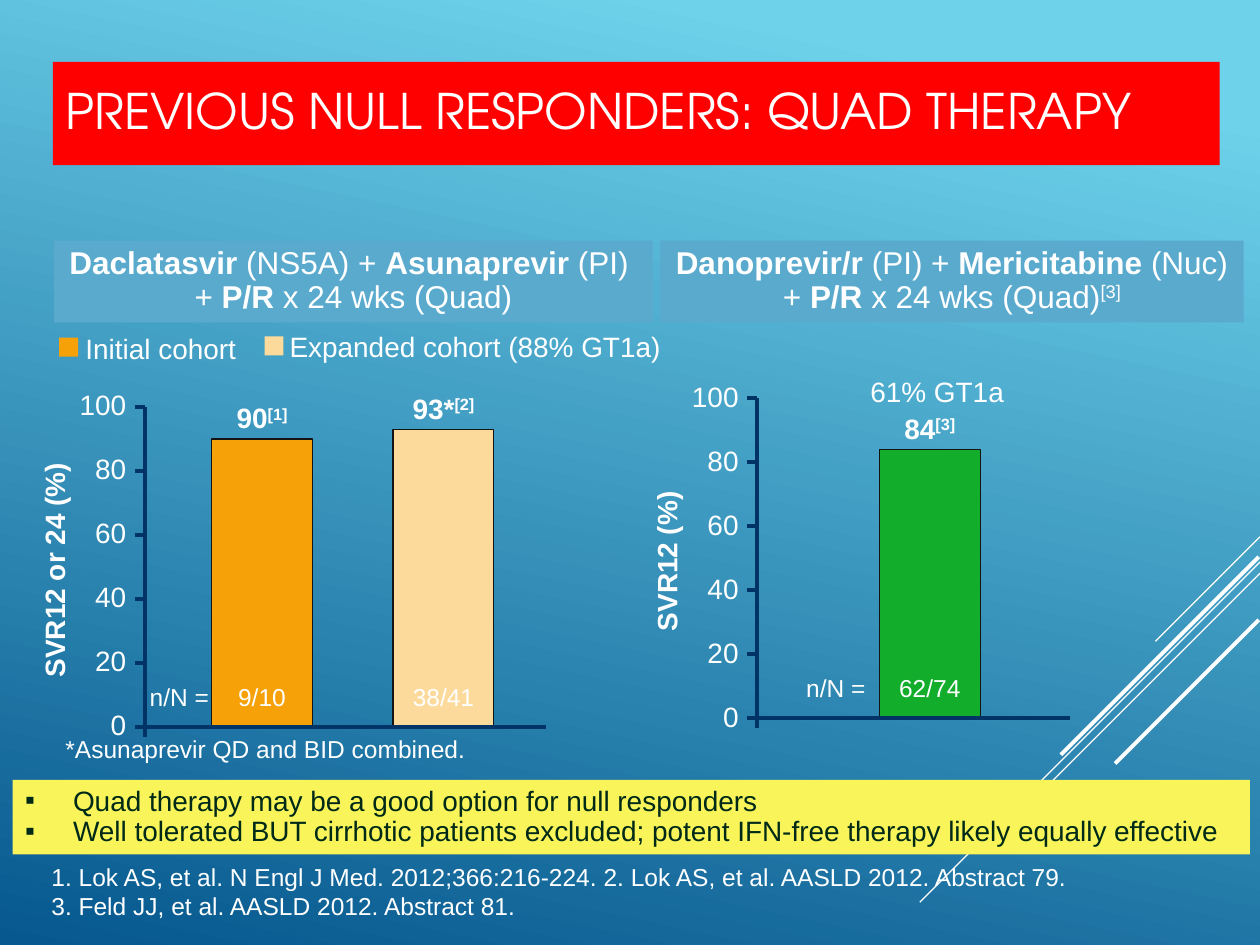
from pptx import Presentation
from pptx.dml.color import RGBColor
from pptx.enum.shapes import MSO_CONNECTOR, MSO_SHAPE
from pptx.enum.text import MSO_ANCHOR, MSO_AUTO_SIZE, PP_ALIGN
from pptx.oxml.ns import qn
from pptx.util import Inches, Pt

LEFT, CENTER, RIGHT = PP_ALIGN.LEFT, PP_ALIGN.CENTER, PP_ALIGN.RIGHT
TOP, MIDDLE = MSO_ANCHOR.TOP, MSO_ANCHOR.MIDDLE
NO_AUTOFIT = MSO_AUTO_SIZE.NONE
STRAIGHT = MSO_CONNECTOR.STRAIGHT
RECTANGLE = MSO_SHAPE.RECTANGLE

COLORS = {
    "sky": "6ED2EB", "deep": "06588E", "white": "FFFFFF", "title": "FF0000",
    "summary": "F8F45A", "summary_text": "002A17", "heading": "5AAACE",
    "axis": "003366", "outline": "141415",
    "initial": "F6A108", "expanded": "FCDA9C", "danoprevir": "12AD2B",
}
BODY_FONT, TITLE_FONT = "Arial", "TeX Gyre Adventor"
TICK_LABELS = (100, 80, 60, 40, 20, 0)
BAR_WIDTH = 0.8


def color(name):
    """Return the named palette colour."""
    return RGBColor.from_string(COLORS[name])


def place(shape, box):
    """Move a shape to a box of left, top, width and height in inches."""
    shape.left, shape.top, shape.width, shape.height = map(Inches, box)


def write(shape, paragraphs, size=16, font=BODY_FONT, ink="white", align=LEFT,
          anchor=TOP, spacing=0.9, wrap=False, bold=False):
    """Write paragraphs, each a list of (text, style) runs; style holds b or s."""
    frame = shape.text_frame
    frame.auto_size = NO_AUTOFIT
    frame.word_wrap = wrap
    frame.vertical_anchor = anchor
    for index, runs in enumerate(paragraphs):
        paragraph = frame.add_paragraph() if index else frame.paragraphs[0]
        paragraph.alignment = align
        paragraph.line_spacing = spacing
        paragraph.space_before = Pt(0)
        for text, style in runs:
            run = paragraph.add_run()
            run.text = text
            run.font.name, run.font.size = font, Pt(size)
            run.font.bold = bold or "b" in style
            run.font.color.rgb = color(ink)
            if "s" in style:
                run.font._element.set("baseline", "30000")


def add_text(slide, box, *runs, **text_format):
    """Add a one-paragraph text box."""
    shape = slide.shapes.add_textbox(*map(Inches, box))
    write(shape, [runs], **text_format)
    return shape


def add_rectangle(slide, box, fill, outline=None):
    """Add a flat rectangle."""
    shape = slide.shapes.add_shape(RECTANGLE, *map(Inches, box))
    shape.shadow.inherit = False
    shape.fill.solid()
    shape.fill.fore_color.rgb = color(fill)
    if outline:
        shape.line.color.rgb = color(outline)
        shape.line.width = Pt(0.75)
    else:
        shape.line.fill.background()
    return shape


def add_line(slide, start, end, ink="axis", width=2.25):
    """Add a straight line without a shadow."""
    line = slide.shapes.add_connector(STRAIGHT, *map(Inches, (*start, *end)))
    line.line.color.rgb = color(ink)
    line.line.width = Pt(width)
    properties = line.element.spPr
    properties.append(properties.makeelement(qn("a:effectLst"), {}))
    return line


def add_backdrop(slide):
    """Fill the background and draw the diagonal lines behind everything."""
    fill = slide.background.fill
    fill.gradient()
    fill.gradient_angle = 258
    for stop, name, position in zip(fill.gradient_stops, ("sky", "deep"), (0.1, 1)):
        stop.color.rgb = color(name)
        stop.position = position
    diagonals = ((10, 4.26, 0.83, 0.75), (10, 4.46, 2.7, 0.75), (10, 4.55, 1.72, 0.75),
                 (9.99, 4.42, 1.57, 2.25), (9.99, 4.92, 1.14, 2.25))
    for x, y, run, width in diagonals:
        line = add_line(slide, (x, y), (x - run, y + run), "white", width)
        slide.shapes.element.insert(2, line.element)


def add_title(slide, box, text):
    """Format the title placeholder as a coloured band."""
    title = slide.shapes.title
    place(title, box)
    title.fill.solid()
    title.fill.fore_color.rgb = color("title")
    write(title, [[(text, "")]], size=28, font=TITLE_FONT, anchor=MIDDLE,
          wrap=True)


def add_summary(slide, box, lines):
    """Format the body placeholder as a bulleted summary band."""
    body = slide.placeholders[1]
    place(body, box)
    body.fill.solid()
    body.fill.fore_color.rgb = color("summary")
    write(body, [[(line, "")] for line in lines], ink="summary_text",
          anchor=MIDDLE, wrap=True)
    for paragraph in body.text_frame.paragraphs:
        properties = paragraph._p.get_or_add_pPr()
        properties.set("marL", str(Inches(0.38)))
        properties.set("indent", str(-Inches(0.38)))
        bullet = properties.makeelement(qn("a:buChar"), {"char": "▪"})
        properties.append(bullet)


def add_heading(slide, box, paragraphs):
    """Add a regimen heading above a chart."""
    write(add_rectangle(slide, box, "heading"), paragraphs, size=18, align=CENTER)


def add_legend_item(slide, left, top, text, fill, gap):
    """Add a legend swatch and its label."""
    add_text(slide, (left + gap, top - 0.1, 3.18, 0.37), (text, ""), spacing=1)
    add_rectangle(slide, (left, top, 0.15, 0.15), fill)


def add_bar_plot(slide, box, axis_title, bars, note_offset):
    """Draw axes, ticks and labelled bars in a box spanning 0 to 100 percent."""
    left, top, width, height = box
    base = top + height
    for offset, value, reference, count, fill in bars:
        x, bar_height = left + offset, height * int(value.strip("*")) / 100
        add_rectangle(slide, (x, base - bar_height, BAR_WIDTH, bar_height),
                      fill, "outline")
        add_text(slide, (x, base - bar_height - 0.32, BAR_WIDTH, 0.34),
                 (value, "b"), (reference, "bs"), align=CENTER)
        add_text(slide, (x, base - 0.38, BAR_WIDTH, 0.31), (count, ""),
                 size=14, align=CENTER)
    add_text(slide, (left + note_offset, base - 0.38, 0.73, 0.31),
             ("n/N =", ""), size=14)
    add_line(slide, (left, top), (left, base + 0.08))
    add_line(slide, (left, base), (left + width, base))
    for index, label in enumerate(TICK_LABELS):
        y = top + height * index / (len(TICK_LABELS) - 1)
        add_line(slide, (left - 0.08, y), (left, y))
        add_text(slide, (left - 0.62, y - 0.17, 0.57, 0.34), (str(label), ""),
                 align=RIGHT)
    title = add_text(slide, (left - 2.02, top + 1.12, 2.64, 0.35),
                     (axis_title, ""), align=CENTER, bold=True, wrap=True)
    title.rotation = 270


def main():
    """Build and save the slide."""
    presentation = Presentation()
    presentation.slide_width, presentation.slide_height = Inches(10), Inches(7.5)
    slide = presentation.slides.add_slide(presentation.slide_layouts[1])
    add_backdrop(slide)
    add_title(slide, (0.42, 0.49, 9.26, 0.82), "PREVIOUS NULL RESPONDERS: QUAD THERAPY")
    add_summary(slide, (0.1, 6.19, 9.82, 0.59), (
        "Quad therapy may be a good option for null responders",
        "Well tolerated BUT cirrhotic patients excluded; "
        "potent IFN-free therapy likely equally effective"))
    references = slide.shapes.add_textbox(*map(Inches, (0.31, 6.79, 9.36, 0.57)))
    write(references, [
        [("1. Lok AS, et al. N Engl J Med. 2012;366:216-224. "
          "2. Lok AS, et al. AASLD 2012. Abstract 79.", "")],
        [("3. Feld JJ, et al. AASLD 2012. Abstract 81.", "")],
    ], size=14, spacing=1, wrap=True)

    add_bar_plot(slide, (1.15, 3.23, 3.18, 2.54), "SVR12 or 24 (%)", (
        (0.53, "90", "[1]", "9/10", "initial"),
        (1.97, "93*", "[2]", "38/41", "expanded")), -0.06)
    add_bar_plot(slide, (6.01, 3.16, 2.48, 2.54), "SVR12 (%)", (
        (0.97, "84", "[3]", "62/74", "danoprevir"),), 0.29)
    add_text(slide, (0.42, 5.8, 3.39, 0.31),
             ("*Asunaprevir QD and BID combined.", ""), size=14)
    add_text(slide, (6.81, 2.95, 1.27, 0.34), ("61% GT1a", ""))

    add_heading(slide, (0.43, 1.91, 4.75, 0.65), (
        [("Daclatasvir", "b"), (" (NS5A) + ", ""), ("Asunaprevir", "b"), (" (PI) ", "")],
        [("+ ", ""), ("P/R", "b"), (" x 24 wks (Quad)", "")]))
    add_heading(slide, (5.24, 1.91, 4.63, 0.65), (
        [("Danoprevir/r ", "b"), ("(PI) + ", ""), ("Mericitabine", "b"), (" (Nuc)", "")],
        [("+ ", ""), ("P/R ", "b"), ("x 24 wks (Quad)", ""), ("[3]", "s")]))
    add_legend_item(slide, 0.47, 2.68, "Initial cohort", "initial", 0.11)
    add_legend_item(slide, 2.1, 2.67, "Expanded cohort (88% GT1a)", "expanded", 0.1)
    presentation.save("out.pptx")


if __name__ == "__main__":
    main()
